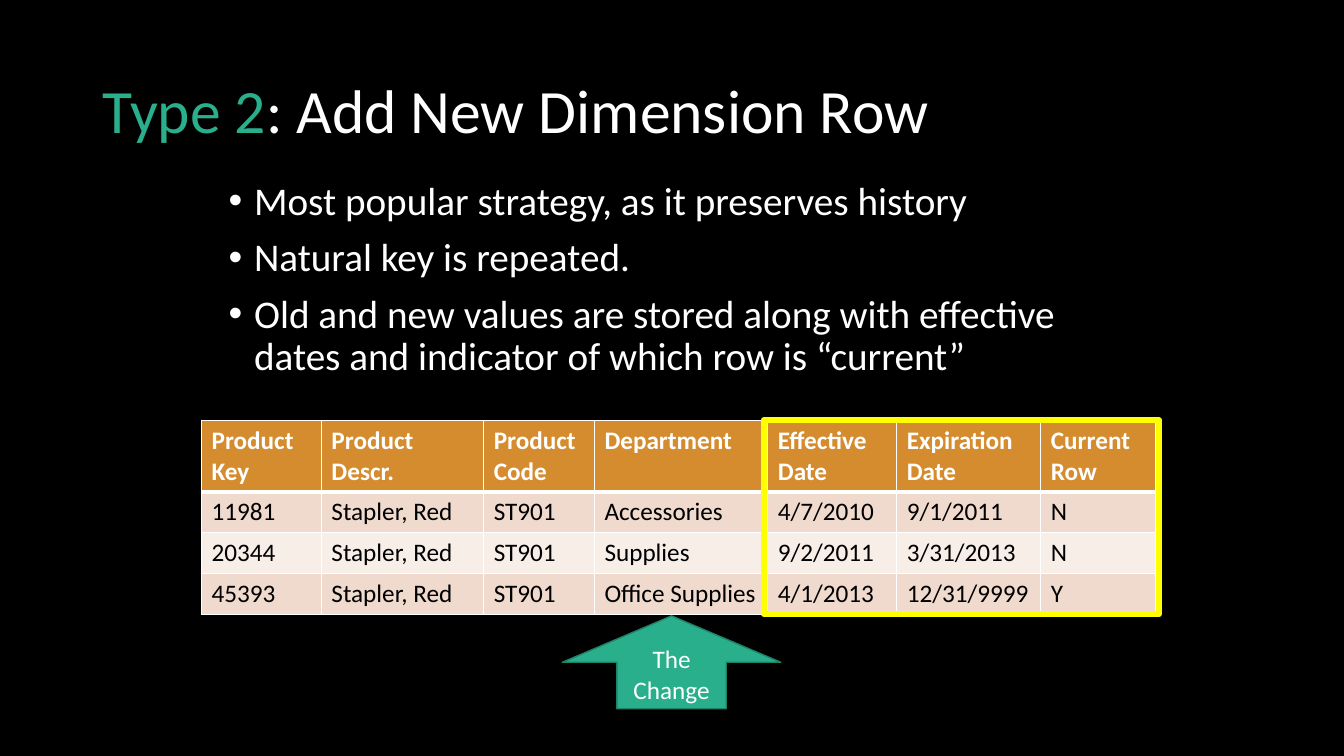
import lxml.etree
import pptx
import pptx.dml.color
import pptx.enum.shapes
import pptx.enum.text
import pptx.oxml.ns
import pptx.util

Cm = pptx.util.Cm
Pt = pptx.util.Pt
qn = pptx.oxml.ns.qn
Shape = pptx.enum.shapes.MSO_SHAPE
Align = pptx.enum.text.PP_ALIGN
Anchor = pptx.enum.text.MSO_ANCHOR

COLOURS = {
    "background": "000000",
    "light": "FFFFFF",
    "dark": "000000",
    "accent": "29AF8C",
    "accent_edge": "1E8168",
    "header": "D58C2E",
    "odd_row": "EFDACD",
    "even_row": "F7EEE8",
    "highlight": "FFFF00",
}

BULLETS = [
    "Most popular strategy, as it preserves history",
    "Natural key is repeated.",
    "Old and new values are stored along with effective dates "
    "and indicator of which row is “current”",
]

PRODUCT_ROWS = [
    ["Product Key", "Product Descr.", "Product Code", "Department",
     "Effective Date", "Expiration Date", "Current Row"],
    ["11981", "Stapler, Red", "ST901", "Accessories", "4/7/2010", "9/1/2011", "N"],
    ["20344", "Stapler, Red", "ST901", "Supplies", "9/2/2011", "3/31/2013", "N"],
    ["45393", "Stapler, Red", "ST901", "Office Supplies", "4/1/2013", "12/31/9999", "Y"],
]
COLUMN_WIDTHS = [3.02, 4.09, 2.79, 4.37, 3.25, 3.63, 2.9]
ROW_HEIGHTS = [1.79, 1.03, 1.03, 1.03]
TABLE_TOP = 10.59


def rgb(name):
    return pptx.dml.color.RGBColor.from_string(COLOURS[name])


def apply_format(target, **values):
    for name, value in values.items():
        setattr(target, name, value)


def place(box, left, top, width, height):
    apply_format(box, left=Cm(left), top=Cm(top), width=Cm(width), height=Cm(height))


def add_span(para, text, size, colour, bold=False):
    span = para.add_run()
    span.text = text
    apply_format(span.font, name="Calibri", size=Pt(size), bold=bold)
    span.font.color.rgb = rgb(colour)


def fill_title(box):
    place(box, 2.34, 1.02, 29.21, 3.68)
    apply_format(box.text_frame, vertical_anchor=Anchor.MIDDLE, word_wrap=True)
    para = box.text_frame.paragraphs[0]
    apply_format(para, alignment=Align.LEFT, line_spacing=0.9)
    add_span(para, "Type 2", 44, "accent")
    add_span(para, ": Add New Dimension Row", 44, "light")


def set_bullet(para):
    properties = para._p.get_or_add_pPr()
    properties.set("marL", str(Cm(0.64)))
    properties.set("indent", str(-Cm(0.64)))
    font = lxml.etree.SubElement(properties, qn("a:buFont"))
    font.set("typeface", "Arial")
    lxml.etree.SubElement(properties, qn("a:buChar")).set("char", "•")


def fill_body(box):
    place(box, 5.51, 4.45, 22.86, 5.72)
    frame = box.text_frame
    for index, text in enumerate(BULLETS):
        para = frame.add_paragraph() if index else frame.paragraphs[0]
        apply_format(para, line_spacing=0.9, space_before=Pt(10))
        set_bullet(para)
        add_span(para, text, 28, "light")


def set_borders(cell, widths):
    properties = cell._tc.get_or_add_tcPr()
    for index, (side, width) in enumerate(widths.items()):
        line = lxml.etree.Element(qn(f"a:ln{side}"), w=str(Pt(width)))
        solid = lxml.etree.SubElement(line, qn("a:solidFill"))
        lxml.etree.SubElement(solid, qn("a:srgbClr")).set("val", COLOURS["light"])
        properties.insert(index, line)


def format_cell(cell, text, row):
    fill = "header" if row == 0 else ("odd_row" if row % 2 else "even_row")
    cell.fill.solid()
    cell.fill.fore_color.rgb = rgb(fill)
    set_borders(cell, {"L": 1, "R": 1, "T": 3 if row == 1 else 1, "B": 1 if row else 3})
    add_span(cell.text_frame.paragraphs[0], text, 18,
             "dark" if row else "light", bold=row == 0)


def add_product_table(page):
    frame = page.shapes.add_table(
        len(PRODUCT_ROWS), len(COLUMN_WIDTHS), Cm(5.08), Cm(TABLE_TOP),
        Cm(sum(COLUMN_WIDTHS)), Cm(sum(ROW_HEIGHTS)))
    table = frame.table
    for column, width in zip(table.columns, COLUMN_WIDTHS):
        column.width = Cm(width)
    for row, (texts, height) in enumerate(zip(PRODUCT_ROWS, ROW_HEIGHTS)):
        table.rows[row].height = Cm(height)
        for column, text in enumerate(texts):
            format_cell(table.cell(row, column), text, row)


def add_outlined_shape(page, kind, bounds, line, width, fill=None):
    shape = page.shapes.add_shape(kind, *map(Cm, bounds))
    shape.shadow.inherit = False
    if fill:
        shape.fill.solid()
        shape.fill.fore_color.rgb = rgb(fill)
    else:
        shape.fill.background()
    shape.line.color.rgb = rgb(line)
    shape.line.width = Pt(width)
    return shape


def add_change_arrow(page):
    arrow = add_outlined_shape(page, Shape.UP_ARROW, (14.17, 15.52, 5.51, 2.34),
                               "accent_edge", 1, "accent")
    apply_format(arrow.text_frame, vertical_anchor=Anchor.MIDDLE, word_wrap=True)
    para = arrow.text_frame.paragraphs[0]
    para.alignment = Align.CENTER
    add_span(para, "The Change", 18, "light")


def main():
    deck = pptx.Presentation()
    apply_format(deck, slide_width=Cm(33.87), slide_height=Cm(19.05))
    page = deck.slides.add_slide(deck.slide_layouts[1])
    page.background.fill.solid()
    page.background.fill.fore_color.rgb = rgb("background")
    fill_title(page.shapes.title)
    fill_body(page.placeholders[1])
    add_product_table(page)
    add_outlined_shape(page, Shape.RECTANGLE, (19.25, TABLE_TOP, 9.96, sum(ROW_HEIGHTS)),
                       "highlight", 4.5)
    add_change_arrow(page)
    deck.save("out.pptx")


if __name__ == "__main__":
    main()
